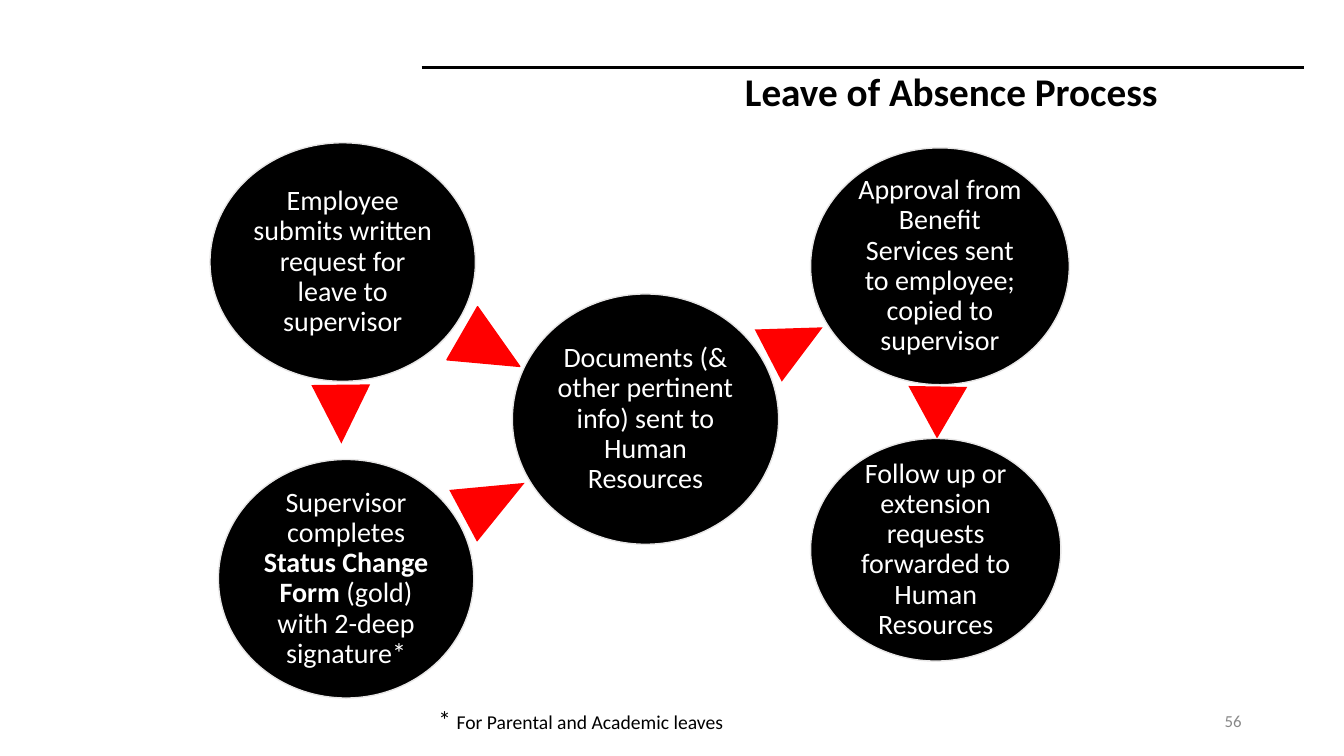
from dataclasses import dataclass

from lxml.etree import SubElement
from pptx import Presentation
from pptx.dml.color import RGBColor
from pptx.enum.shapes import MSO_CONNECTOR, MSO_SHAPE
from pptx.enum.text import MSO_ANCHOR, MSO_AUTO_SIZE, PP_ALIGN
from pptx.oxml.ns import qn
from pptx.shapes.autoshape import Shape
from pptx.slide import Slide
from pptx.util import Inches, Pt

SLIDE_WIDTH = Inches(13.33)
SLIDE_HEIGHT = Inches(7.5)
COLUMNS = 160
ROWS = 90
FONT = "Calibri"
BLACK = "000000"
WHITE = "FFFFFF"
RED = "FF0000"
PALE_GRAY = "E7E6E6"
GRAY = "888888"


@dataclass(frozen=True)
class Box:
    column: float
    row: float
    columns: float
    rows: float

    def lengths(self) -> tuple[int, int, int, int]:
        return (across(self.column), down(self.row), across(self.columns), down(self.rows))


@dataclass(frozen=True)
class Words:
    text: str
    size: int
    bold: bool = False


@dataclass(frozen=True)
class Step:
    box: Box
    words: tuple[Words, ...]


@dataclass(frozen=True)
class Arrow:
    box: Box
    rotation: float
    outlined: bool = False


def across(columns: float) -> int:
    return round(SLIDE_WIDTH * columns / COLUMNS)


def down(rows: float) -> int:
    return round(SLIDE_HEIGHT * rows / ROWS)


def color(value: str) -> RGBColor:
    return RGBColor.from_string(value)


def step(box: Box, *texts: str, bold_index: int = -1) -> Step:
    return Step(box, tuple(Words(text, 20, index == bold_index) for index, text in enumerate(texts)))


PROCESS = (
    step(Box(25, 17, 31.6, 28.4), "Employee submits written request for leave to supervisor"),
    Arrow(Box(37.1, 45.8, 7, 7), 179.4),
    step(
        Box(26, 54.7, 30.4, 28.4),
        "Supervisor completes ",
        "Status Change Form ",
        "(gold) with 2-deep signature*",
        bold_index=1,
    ),
    Arrow(Box(55.3, 55.3, 7, 8.3), 61.8),
    step(Box(61, 35, 31.7, 29.8), "Documents (& other pertinent info) sent to Human Resources"),
    Arrow(Box(91.2, 37, 7, 7.3), 62.6),
    step(
        Box(96.5, 17.6, 30.8, 28.2),
        "Approval from Benefit Services sent to employee; copied to supervisor",
    ),
    Arrow(Box(108.1, 46, 7, 6.2), 180.9),
    step(
        Box(96.5, 52.2, 29.8, 26.5),
        "Follow up or extension requests forwarded to Human Resources",
    ),
    Arrow(Box(54.8, 37.7, 7.3, 7.9), 120, outlined=True),
)


def write(
    shape: Shape,
    words: tuple[Words, ...],
    ink: str,
    alignment: PP_ALIGN,
    anchor: MSO_ANCHOR,
    line_spacing: float = 1.0,
) -> None:
    frame = shape.text_frame
    frame.word_wrap = True
    frame.auto_size = MSO_AUTO_SIZE.NONE
    frame.vertical_anchor = anchor
    paragraph = frame.paragraphs[0]
    paragraph.alignment = alignment
    paragraph.line_spacing = line_spacing
    for part in words:
        run = paragraph.add_run()
        run.text = part.text
        run.font.name = FONT
        run.font.size = Pt(part.size)
        run.font.bold = part.bold
        run.font.color.rgb = color(ink)


def add_filled_shape(slide: Slide, kind: MSO_SHAPE, box: Box, fill: str, outline: str | None) -> Shape:
    shape = slide.shapes.add_shape(kind, *box.lengths())
    shape.shadow.inherit = False
    shape.fill.solid()
    shape.fill.fore_color.rgb = color(fill)
    if outline:
        shape.line.color.rgb = color(outline)
        shape.line.width = Pt(1)
    else:
        shape.line.fill.background()
    return shape


def add_step(slide: Slide, item: Step) -> None:
    circle = add_filled_shape(slide, MSO_SHAPE.OVAL, item.box, BLACK, PALE_GRAY)
    frame = circle.text_frame
    frame.margin_left = frame.margin_right = Inches(0.03)
    frame.margin_top = frame.margin_bottom = Inches(0.03)
    write(circle, item.words, WHITE, PP_ALIGN.CENTER, MSO_ANCHOR.MIDDLE, 0.9)


def add_arrow(slide: Slide, item: Arrow) -> None:
    outline = RED if item.outlined else None
    triangle = add_filled_shape(slide, MSO_SHAPE.ISOSCELES_TRIANGLE, item.box, RED, outline)
    triangle.rotation = item.rotation


def add_rule(slide: Slide) -> None:
    rule = slide.shapes.add_connector(
        MSO_CONNECTOR.STRAIGHT, across(50.2), down(8), across(155.2), down(8)
    )
    rule.line.color.rgb = color(BLACK)
    rule.line.width = Pt(2.25)
    SubElement(rule.element.spPr, qn("a:effectLst"))


def add_title(slide: Slide) -> None:
    title = slide.shapes.title
    title.left, title.top, title.width, title.height = Box(31, 8, 108, 15).lengths()
    words = (Words("Leave of Absence Process", 28, True),)
    write(title, words, BLACK, PP_ALIGN.RIGHT, MSO_ANCHOR.TOP, 0.9)


def add_notes_line(slide: Slide) -> None:
    footnote = slide.shapes.add_textbox(*Box(51, 83.2, 53, 4.8).lengths())
    words = (Words("* ", 18), Words("For Parental and Academic leaves", 14))
    write(footnote, words, BLACK, PP_ALIGN.LEFT, MSO_ANCHOR.TOP)
    number = slide.shapes.add_textbox(*Box(113, 83.4, 36, 4.8).lengths())
    write(number, (Words("56", 12),), GRAY, PP_ALIGN.RIGHT, MSO_ANCHOR.MIDDLE)


def main() -> None:
    presentation = Presentation()
    presentation.slide_width = SLIDE_WIDTH
    presentation.slide_height = SLIDE_HEIGHT
    slide = presentation.slides.add_slide(presentation.slide_layouts.get_by_name("Title Only"))
    add_rule(slide)
    add_title(slide)
    for item in PROCESS:
        if isinstance(item, Step):
            add_step(slide, item)
        else:
            add_arrow(slide, item)
    add_notes_line(slide)
    presentation.save("out.pptx")


if __name__ == "__main__":
    main()
